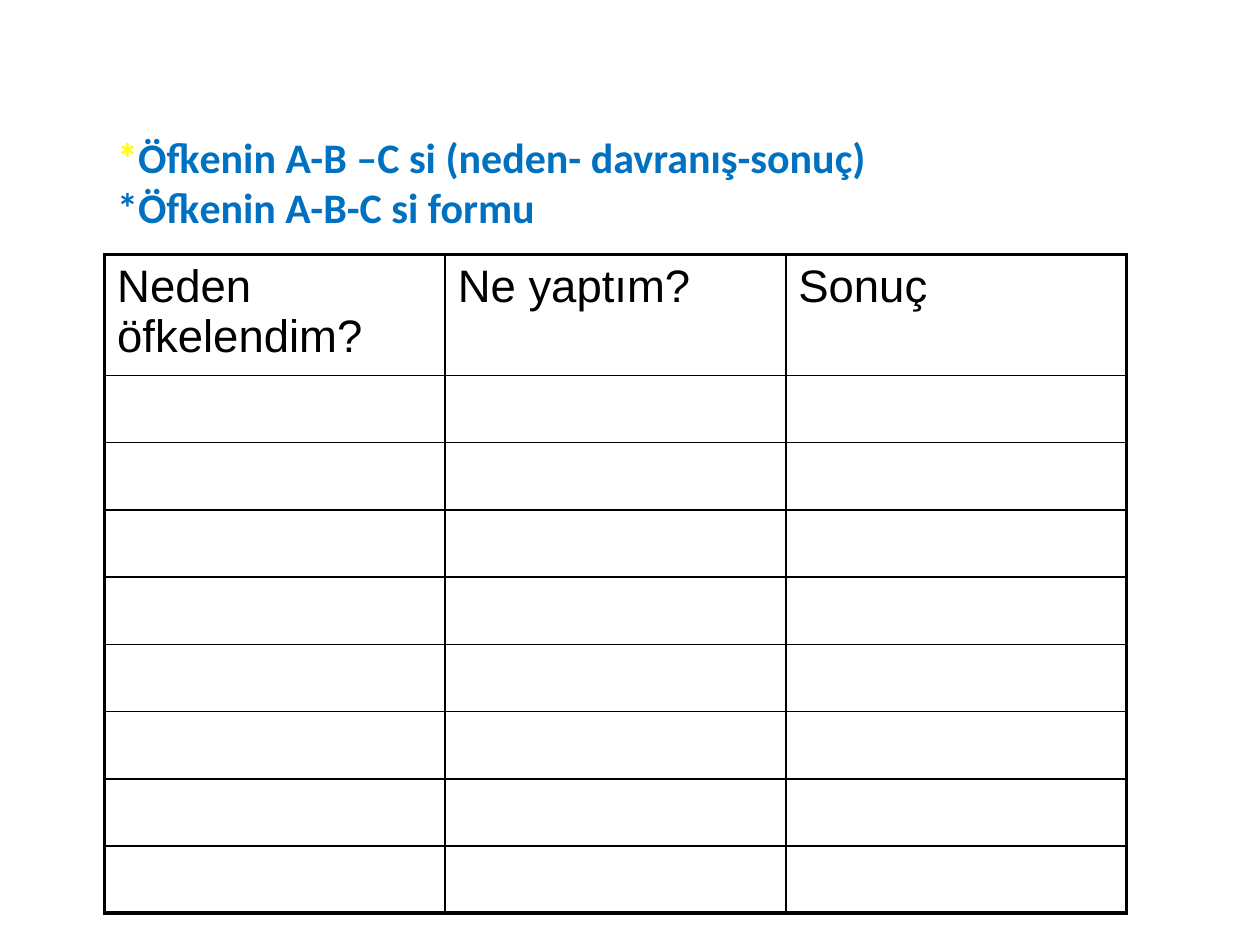
"""Build a slide with an anger A-B-C form: a two-line title and an empty table."""
from lxml.etree import SubElement
from pptx import Presentation
from pptx.dml.color import RGBColor
from pptx.enum.text import MSO_ANCHOR, MSO_AUTO_SIZE, PP_ALIGN
from pptx.oxml.ns import qn
from pptx.util import Inches, Pt

TITLE = [
    [("*", "FFFF00"), ("Öfkenin A-B –C si (neden- davranış-sonuç)", "0070C0")],
    [("*Öfkenin A-B-C si formu", "0070C0")],
]
HEADERS = ["Neden öfkelendim?", "Ne yaptım?", "Sonuç"]
EMPTY_ROWS = 8
LEFT, TOP, WIDTH, HEIGHT = 0.83, 2.02, 8.11, 5.23
HEADER_HEIGHT = 0.96
INNER, OUTER = 1, 2.25


def color(value):
    return RGBColor.from_string(value)


def add_title(page):
    box = page.shapes.title
    box.left, box.top, box.width, box.height = map(Inches, (0.83, 0.99, 7.72, 0.91))
    frame = box.text_frame
    frame.word_wrap = True
    frame.auto_size = MSO_AUTO_SIZE.NONE
    frame.vertical_anchor = MSO_ANCHOR.TOP
    for index, spans in enumerate(TITLE):
        para = frame.add_paragraph() if index else frame.paragraphs[0]
        para.alignment = PP_ALIGN.LEFT
        para.font.name, para.font.size, para.font.bold = "Calibri", Pt(24), True
        for text, hue in spans:
            span = para.add_run()
            span.text = text
            span.font.color.rgb = color(hue)


def set_borders(cell, widths):
    properties = cell._tc.get_or_add_tcPr()
    for position, (side, width) in enumerate(widths.items()):
        line = properties.makeelement(qn(f"a:ln{side}"), w=str(Pt(width)))
        fill = SubElement(line, qn("a:solidFill"))
        SubElement(fill, qn("a:srgbClr"), val="000000")
        properties.insert(position, line)


def add_form(page):
    rows, columns = EMPTY_ROWS + 1, len(HEADERS)
    table = page.shapes.add_table(
        rows, columns, *map(Inches, (LEFT, TOP, WIDTH, HEIGHT))
    ).table
    for row in table.rows:
        row.height = Inches((HEIGHT - HEADER_HEIGHT) / EMPTY_ROWS)
    table.rows[0].height = Inches(HEADER_HEIGHT)
    for r in range(rows):
        for c in range(columns):
            cell = table.cell(r, c)
            cell.fill.background()
            set_borders(cell, {
                "L": OUTER if c == 0 else INNER,
                "R": OUTER if c == columns - 1 else INNER,
                "T": OUTER if r == 0 else INNER,
                "B": OUTER if r == rows - 1 else INNER,
            })
    for cell, text in zip(table.rows[0].cells, HEADERS):
        cell.text = text
        font = cell.text_frame.paragraphs[0].font
        font.name, font.size, font.bold = "Arial", Pt(26), False
        font.color.rgb = color("000000")


def main():
    deck = Presentation()
    deck.slide_width, deck.slide_height = Inches(10), Inches(7.5)
    page = deck.slides.add_slide(deck.slide_layouts[5])
    add_title(page)
    add_form(page)
    deck.save("out.pptx")


if __name__ == "__main__":
    main()
